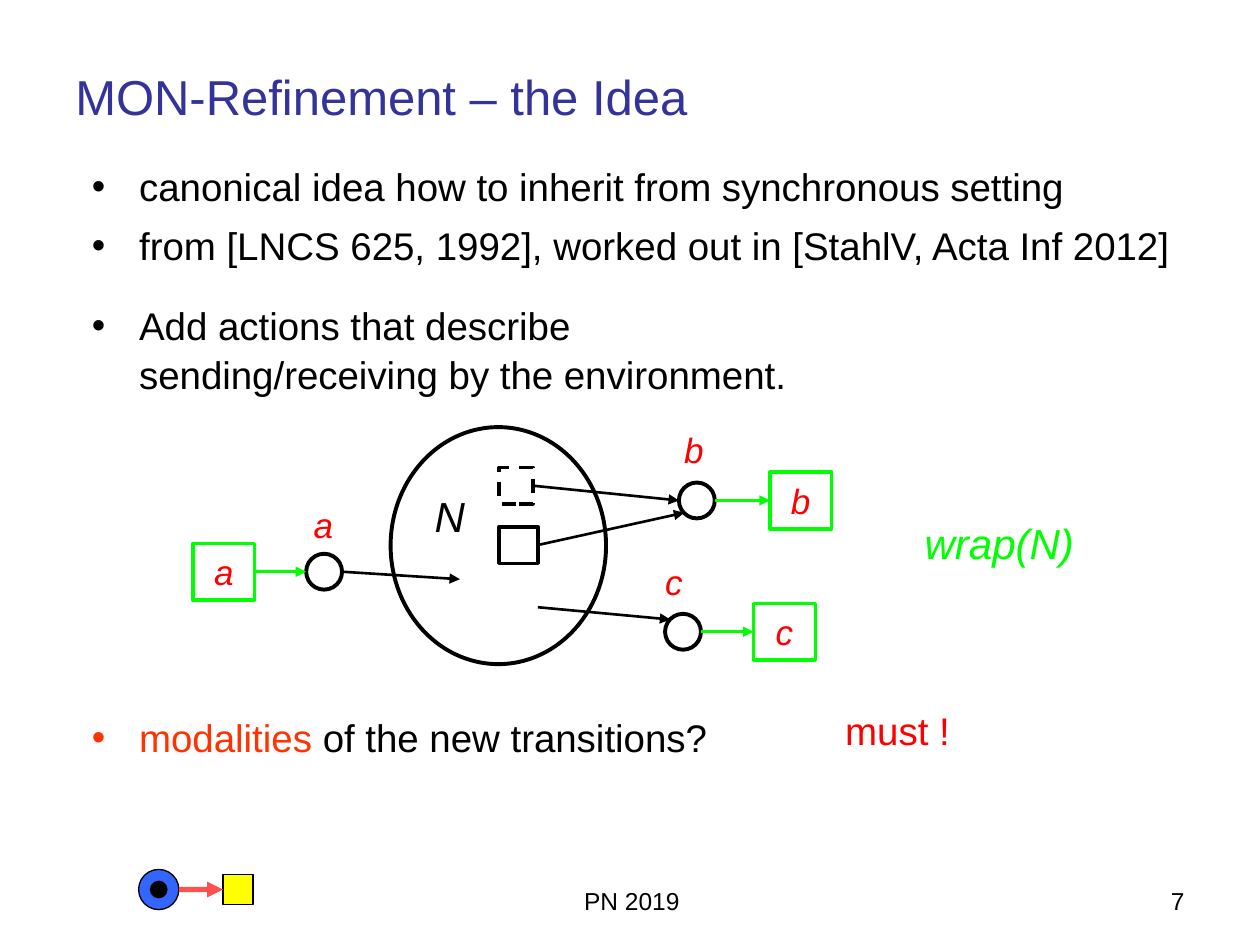
"""Build the MON-Refinement slide: bullets around a wrapped Petri net diagram."""
from lxml.etree import SubElement
from pptx import Presentation
from pptx.dml.color import RGBColor
from pptx.enum.dml import MSO_LINE_DASH_STYLE as Dash
from pptx.enum.shapes import MSO_CONNECTOR as Connector, MSO_SHAPE as Shape
from pptx.enum.text import MSO_ANCHOR as Anchor, PP_ALIGN as Align
from pptx.oxml.ns import qn
from pptx.util import Pt

FONT = "Arial"
BLACK, RED, GREEN, ORANGE = "000000", "FF0000", "00FF00", "FF3300"
LEFT, RIGHT = 1, 3
PLACE = 20.5
ACTION = (35.3, 32.4)
INDENT = 27

TITLE = "MON-Refinement – the Idea"
BULLETS = [
    (6, [[("canonical idea how to inherit from synchronous setting", BLACK)]]),
    (6, [[("from [LNCS 625, 1992], worked out in [StahlV, Acta Inf 2012]", BLACK)]]),
    (18, [[("Add actions that describe ", BLACK)],
          [("sending/receiving by the environment.", BLACK)]]),
    (180, [[("modalities ", ORANGE), ("of the new transitions?", BLACK)]]),
]
PLACES = {"a": (185.2, 326.7), "b": (398.2, 286), "c": (390.3, 361)}
ACTION_LEFTS = {"a": 110.2, "b": 439.9, "c": 430.6}
LABELS = [
    ("a", (172.1, 284.4, 23, 28), dict(size=20, color=RED, italic=True)),
    ("b", (383.8, 241.2, 25.9, 31.7), dict(size=20, color=RED, italic=True)),
    ("c", (373, 316.8, 24.5, 31.7), dict(size=20, color=RED, italic=True)),
    ("N", (241.2, 276.5, 32.4, 36), dict(size=24, italic=True, before=6)),
    ("wrap(N)", (521.3, 292.3, 100.8, 36), dict(size=24, color=GREEN, italic=True, before=6)),
    ("must !", (475.9, 400.3, 74.9, 33.8), dict(size=22, color=RED)),
]
FOOTERS = [
    ("PN 2019", (247, 502.6, 228.2, 26), Align.CENTER),
    ("7", (516.2, 502.6, 167.8, 26), Align.RIGHT),
]


def rgb(value):
    """Turn a hex string into a colour."""
    return RGBColor.from_string(value)


def set_values(target, values):
    """Set every attribute named in the dict."""
    for name, value in values.items():
        setattr(target, name, value)


def add_run(paragraph, text, size, color=BLACK, italic=False):
    """Add one formatted run."""
    run = paragraph.add_run()
    run.text = text
    set_values(run.font, dict(name=FONT, size=Pt(size), italic=italic))
    run.font.color.rgb = rgb(color)


def add_text(slide, box, text, size, color=BLACK, italic=False, before=0,
             align=Align.LEFT, anchor=Anchor.TOP, wrap=True):
    """Add a text box with a single paragraph."""
    frame = slide.shapes.add_textbox(*map(Pt, box)).text_frame
    set_values(frame, dict(word_wrap=wrap, vertical_anchor=anchor))
    paragraph = frame.paragraphs[0]
    set_values(paragraph, dict(alignment=align, space_before=Pt(before)))
    add_run(paragraph, text, size, color, italic)


def add_bullets(slide, box):
    """Add the bulleted list with hanging indents."""
    frame = slide.shapes.add_textbox(*map(Pt, box)).text_frame
    frame.word_wrap = True
    for index, (before, lines) in enumerate(BULLETS):
        paragraph = frame.add_paragraph() if index else frame.paragraphs[0]
        set_values(paragraph, dict(space_before=Pt(before), line_spacing=1.05))
        properties = paragraph._p.get_or_add_pPr()
        properties.set("marL", str(Pt(INDENT)))
        properties.set("indent", str(-Pt(INDENT)))
        SubElement(properties, qn("a:buFont"), typeface=FONT)
        SubElement(properties, qn("a:buChar"), char="•")
        for number, line in enumerate(lines):
            if number:
                paragraph.add_line_break()
            for text, color in line:
                add_run(paragraph, text, 22, color)


def add_outline(slide, kind, box, color=BLACK, width=2.25, fill=None, dash=None):
    """Add a preset shape with an outline and an optional fill."""
    shape = slide.shapes.add_shape(kind, *map(Pt, box))
    shape.shadow.inherit = False
    if fill:
        shape.fill.solid()
        shape.fill.fore_color.rgb = rgb(fill)
    else:
        shape.fill.background()
    shape.line.color.rgb = rgb(color)
    set_values(shape.line, dict(width=Pt(width), dash_style=dash))
    return shape


def add_circle(slide, center, diameter, **style):
    """Add a circle around a centre."""
    left, top = (value - diameter / 2 for value in center)
    return add_outline(slide, Shape.OVAL, (left, top, diameter, diameter), **style)


def add_arrow(slide, start, end, color=BLACK, width=1.5, source=None, target=None):
    """Add an arrow, joined to the rectangles given as source or target."""
    arrow = slide.shapes.add_connector(Connector.STRAIGHT, *map(Pt, (*start, *end)))
    if source is not None:
        arrow.begin_connect(source, RIGHT)
    if target is not None:
        arrow.end_connect(target, LEFT)
    arrow.line.color.rgb = rgb(color)
    arrow.line.width = Pt(width)
    SubElement(arrow.line._get_or_add_ln(), qn("a:tailEnd"), type="triangle")
    SubElement(arrow._element.spPr, qn("a:effectLst"))


def add_emblem(slide):
    """Add the small marked place with its transition in the footer."""
    center = (90.7, 508.3)
    square = add_outline(slide, Shape.RECTANGLE, (127.4, 499.7, 17.3, 17.3), width=0.75, fill="FFFF00")
    for diameter, fill in ((23, "3366FF"), (9.4, BLACK)):
        add_circle(slide, center, diameter, width=0.75, fill=fill)
    add_arrow(slide, (102.2, 508.3), (127.4, 508.3), "FF5050", 3, target=square)


def add_net(slide):
    """Add the inner net, its interface places and the wrapping actions."""
    add_outline(slide, Shape.OVAL, (223.2, 244.1, 123.1, 135.4))
    dashed = add_outline(slide, Shape.RECTANGLE, (285.1, 267.1, 19.4, 20.9), width=2, dash=Dash.DASH)
    solid = add_outline(slide, Shape.RECTANGLE, (285.1, 301, 22.3, 20.9), width=2)
    width, height = ACTION
    for name, (x, y) in PLACES.items():
        add_circle(slide, (x, y), PLACE)
        left = ACTION_LEFTS[name]
        action = add_outline(slide, Shape.RECTANGLE, (left, y - height / 2, width, height), GREEN, 2)
        action.text_frame.vertical_anchor = Anchor.MIDDLE
        paragraph = action.text_frame.paragraphs[0]
        paragraph.alignment = Align.CENTER
        add_run(paragraph, name, 20, RED, True)
        if left < x:
            add_arrow(slide, (left + width, y), (x - PLACE / 2, y), GREEN, source=action)
        else:
            add_arrow(slide, (x + PLACE / 2, y), (left, y), GREEN, target=action)
    add_arrow(slide, (304.5, 277.5), (388, 286), source=dashed)
    add_arrow(slide, (307.4, 311.5), (391, 293), source=solid)
    add_arrow(slide, (307.4, 347), (383, 354), )
    add_arrow(slide, (195.5, 326.7), (262.8, 331))


def main():
    """Assemble and save the slide."""
    presentation = Presentation()
    set_values(presentation, dict(slide_width=Pt(720), slide_height=Pt(540)))
    slide = presentation.slides.add_slide(presentation.slide_layouts[6])
    add_emblem(slide)
    for text, box, align in FOOTERS:
        add_text(slide, box, text, 14, align=align)
    add_text(slide, (36, 21.6, 648, 67), TITLE, 28, "333399", anchor=Anchor.MIDDLE)
    add_bullets(slide, (45.4, 88.6, 640, 363))
    add_net(slide)
    for text, box, style in LABELS:
        add_text(slide, box, text, wrap=False, **style)
    presentation.save("out.pptx")


if __name__ == "__main__":
    main()
